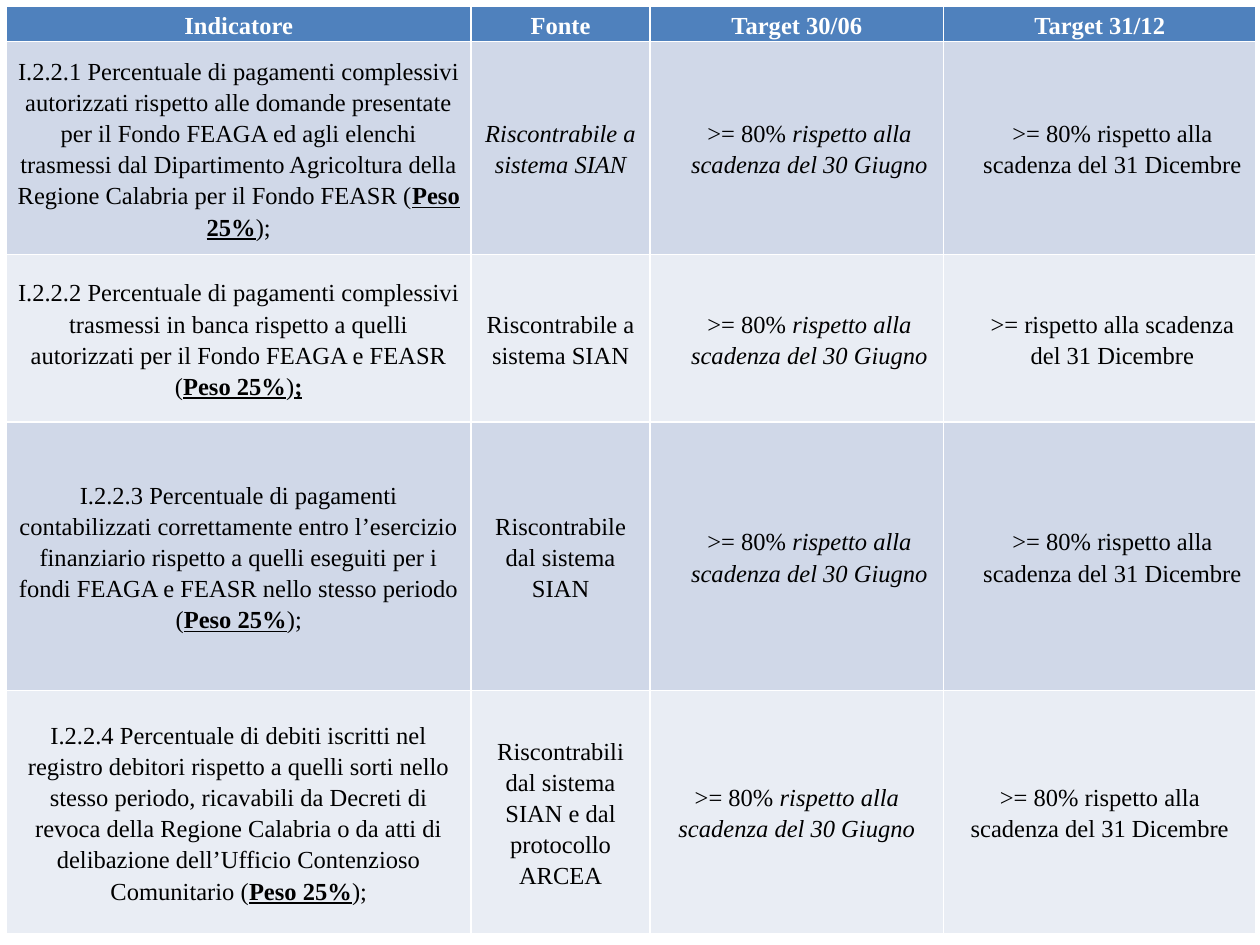
from dataclasses import dataclass

from pptx import Presentation
from pptx.dml.color import RGBColor
from pptx.enum.text import MSO_ANCHOR, PP_ALIGN
from pptx.table import _Cell
from pptx.util import Inches, Pt

WHITE = RGBColor(0xFF, 0xFF, 0xFF)
BLACK = RGBColor(0x00, 0x00, 0x00)
HEADER_BLUE = RGBColor(0x4F, 0x81, 0xBD)
BAND_DARK = RGBColor(0xD0, 0xD8, 0xE8)
BAND_LIGHT = RGBColor(0xE9, 0xED, 0xF4)

COLUMN_WIDTHS = (3.69, 1.42, 2.33, 2.48)
HEADER_HEIGHT = 0.28
HEADERS = ("Indicatore", "Fonte", "Target 30/06", "Target 31/12")


@dataclass(frozen=True)
class Run:
    text: str
    bold: bool = False
    italic: bool = False
    underline: bool = False


@dataclass(frozen=True)
class Indicator:
    description: str
    source: Run
    height: float
    closing: tuple[Run, ...] = (Run(");"),)
    december_target: str = ">= 80% rispetto alla scadenza del 31 Dicembre"
    target_indent: float = 0.2
    space_after: int = 6


WEIGHT = Run("Peso 25%", bold=True, underline=True)
JUNE_TARGET = (Run(">= 80% "), Run("rispetto alla scadenza del 30 Giugno", italic=True))

INDICATORS = (
    Indicator(
        "I.2.2.1 Percentuale di pagamenti complessivi autorizzati rispetto alle domande "
        "presentate per il Fondo FEAGA ed agli elenchi trasmessi dal Dipartimento "
        "Agricoltura della Regione Calabria per il Fondo FEASR (",
        Run("Riscontrabile a sistema SIAN", italic=True),
        height=1.69,
    ),
    Indicator(
        "I.2.2.2 Percentuale di pagamenti complessivi trasmessi in banca rispetto a "
        "quelli autorizzati per il Fondo FEAGA e FEASR (",
        Run("Riscontrabile a sistema SIAN"),
        height=1.33,
        closing=(Run(")"), Run(";", bold=True, underline=True)),
        december_target=">= rispetto alla scadenza del 31 Dicembre",
    ),
    Indicator(
        "I.2.2.3 Percentuale di pagamenti contabilizzati correttamente entro l’esercizio "
        "finanziario rispetto a quelli eseguiti per i fondi FEAGA e FEASR nello stesso "
        "periodo (",
        Run("Riscontrabile dal sistema SIAN"),
        height=2.13,
    ),
    Indicator(
        "I.2.2.4 Percentuale di debiti iscritti nel registro debitori rispetto a quelli "
        "sorti nello stesso periodo, ricavabili da Decreti di revoca della Regione "
        "Calabria o da atti di delibazione dell’Ufficio Contenzioso Comunitario (",
        Run("Riscontrabili dal sistema SIAN e dal protocollo ARCEA"),
        height=1.93,
        target_indent=0,
        space_after=10,
    ),
)


def write_cell(cell: _Cell, runs: tuple[Run, ...], *, fill: RGBColor,
               color: RGBColor = BLACK, indent: float = 0, space_after: int = 0) -> None:
    cell.fill.solid()
    cell.fill.fore_color.rgb = fill
    cell.vertical_anchor = MSO_ANCHOR.MIDDLE
    cell.margin_left = cell.margin_right = Inches(0.07)
    cell.margin_top = cell.margin_bottom = 0

    paragraph = cell.text_frame.paragraphs[0]
    paragraph.alignment = PP_ALIGN.CENTER
    paragraph.line_spacing = 1.15
    paragraph.space_after = Pt(space_after)
    if indent:
        properties = paragraph._p.get_or_add_pPr()
        properties.set("marL", str(Inches(indent)))
        properties.set("indent", "0")

    for run in runs:
        text_run = paragraph.add_run()
        text_run.text = run.text
        font = text_run.font
        font.name = "Times New Roman"
        font.size = Pt(14)
        font.color.rgb = color
        font.bold = run.bold
        font.italic = run.italic
        font.underline = run.underline


def main() -> None:
    presentation = Presentation()
    presentation.slide_width = Inches(10)
    presentation.slide_height = Inches(7.5)
    slide = presentation.slides.add_slide(presentation.slide_layouts[6])

    row_heights = (HEADER_HEIGHT, *(indicator.height for indicator in INDICATORS))
    indicator_table = slide.shapes.add_table(
        len(row_heights), len(COLUMN_WIDTHS), Inches(0.05), Inches(0.05),
        Inches(sum(COLUMN_WIDTHS)), Inches(sum(row_heights)),
    ).table
    for column, width in zip(indicator_table.columns, COLUMN_WIDTHS):
        column.width = Inches(width)
    for row, height in zip(indicator_table.rows, row_heights):
        row.height = Inches(height)

    for column_index, header in enumerate(HEADERS):
        write_cell(indicator_table.cell(0, column_index), (Run(header, bold=True),),
                   fill=HEADER_BLUE, color=WHITE)

    for row_index, indicator in enumerate(INDICATORS, start=1):
        band = BAND_DARK if row_index % 2 else BAND_LIGHT
        contents = (
            (Run(indicator.description), WEIGHT, *indicator.closing),
            (indicator.source,),
            JUNE_TARGET,
            (Run(indicator.december_target),),
        )
        for column_index, runs in enumerate(contents):
            write_cell(indicator_table.cell(row_index, column_index), runs, fill=band,
                       indent=indicator.target_indent if column_index >= 2 else 0,
                       space_after=indicator.space_after)

    presentation.save("out.pptx")


if __name__ == "__main__":
    main()
